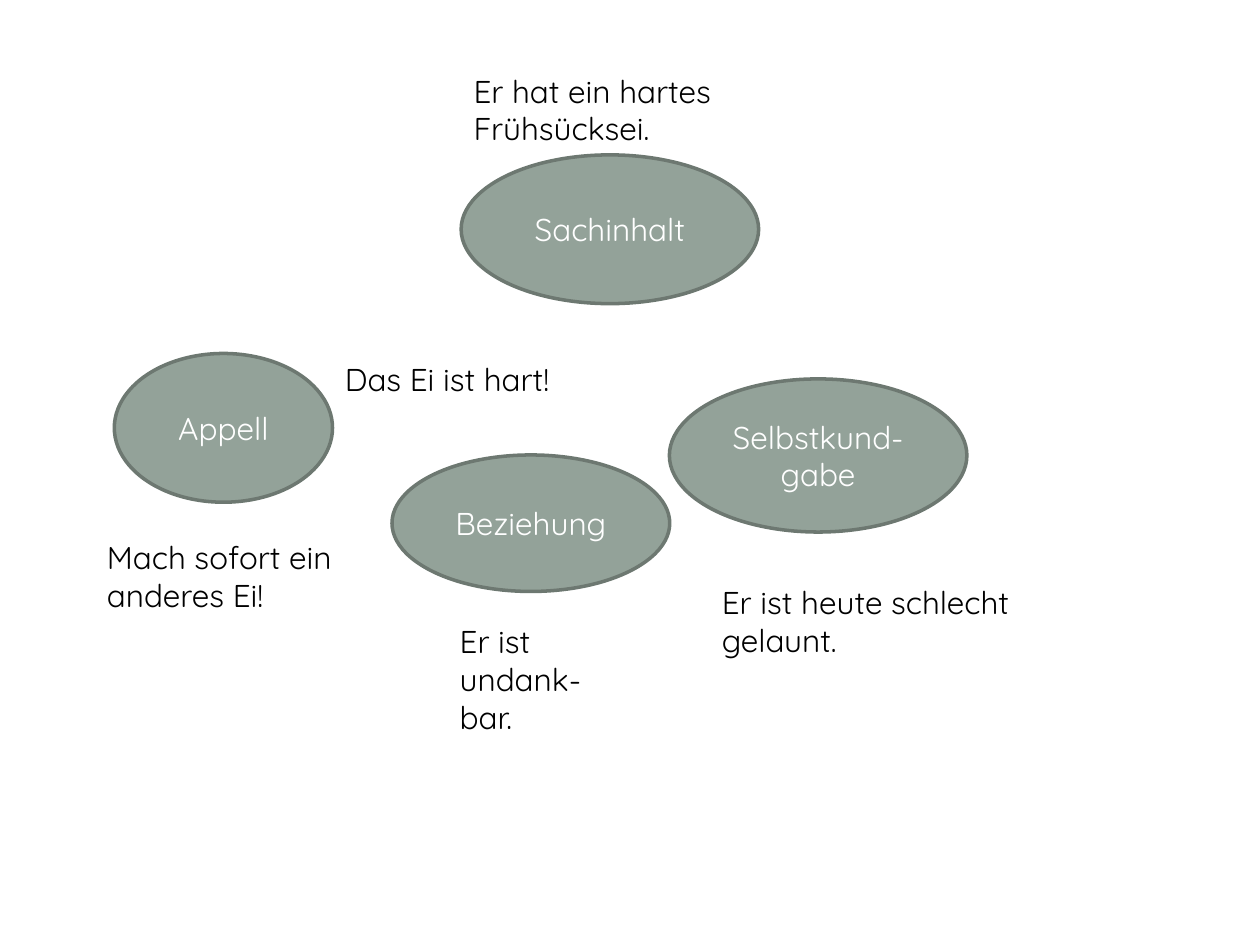
import pptx
import pptx.util
import pptx.dml.color
import pptx.enum.shapes
import pptx.enum.text

Pt = pptx.util.Pt
RGB = pptx.dml.color.RGBColor.from_string
ALIGN = pptx.enum.text.PP_ALIGN
ANCHOR = pptx.enum.text.MSO_ANCHOR

COLORS = {"fill": "93A299", "line": "6D7871", "light": "FFFFFF", "dark": "000000"}
FONT = {"name": "Quicksand", "size": Pt(18)}


def write(sp, text, color, align, anchor):
    tf = sp.text_frame
    for key, value in {"word_wrap": True, "vertical_anchor": anchor}.items():
        setattr(tf, key, value)
    p = tf.paragraphs[0]
    p.alignment = align
    r = p.add_run()
    r.text = text
    for key, value in FONT.items():
        setattr(r.font, key, value)
    r.font.color.rgb = RGB(COLORS[color])


prs = pptx.Presentation()
prs.slide_width, prs.slide_height = Pt(720), Pt(540)
s = prs.slides.add_slide(prs.slide_layouts[6])

# The four sides of the message: left, top, width, height
sides = [
    ("Sachinhalt", 263.5, 88.5, 170, 85),
    ("Appell", 65.3, 202, 124.7, 85),
    ("Selbstkund-gabe", 382.5, 216.5, 170, 87.5),
    ("Beziehung", 224, 260, 158.7, 78),
]
for text, *box in sides:
    sp = s.shapes.add_shape(pptx.enum.shapes.MSO_SHAPE.OVAL, *map(Pt, box))
    sp.shadow.inherit = False
    sp.fill.solid()
    sp.fill.fore_color.rgb = RGB(COLORS["fill"])
    sp.line.color.rgb = RGB(COLORS["line"])
    sp.line.width = Pt(2)
    write(sp, text, "light", ALIGN.CENTER, ANCHOR.MIDDLE)

# The message itself, then how each side is heard
sentences = [
    ("Das Ei ist hart!", 190, 202, 260.6, 29),
    ("Er hat ein hartes Frühsücksei.", 263.5, 37.4, 170, 51),
    ("Mach sofort ein anderes Ei!", 54, 303.8, 153.4, 51),
    ("Er ist heute schlecht gelaunt.", 405.4, 329.8, 181.4, 51),
    ("Er ist undank-bar.", 255.6, 352.1, 97.9, 72.7),
]
for text, *box in sentences:
    sp = s.shapes.add_textbox(*map(Pt, box))
    write(sp, text, "dark", ALIGN.LEFT, ANCHOR.TOP)

prs.save("out.pptx")
